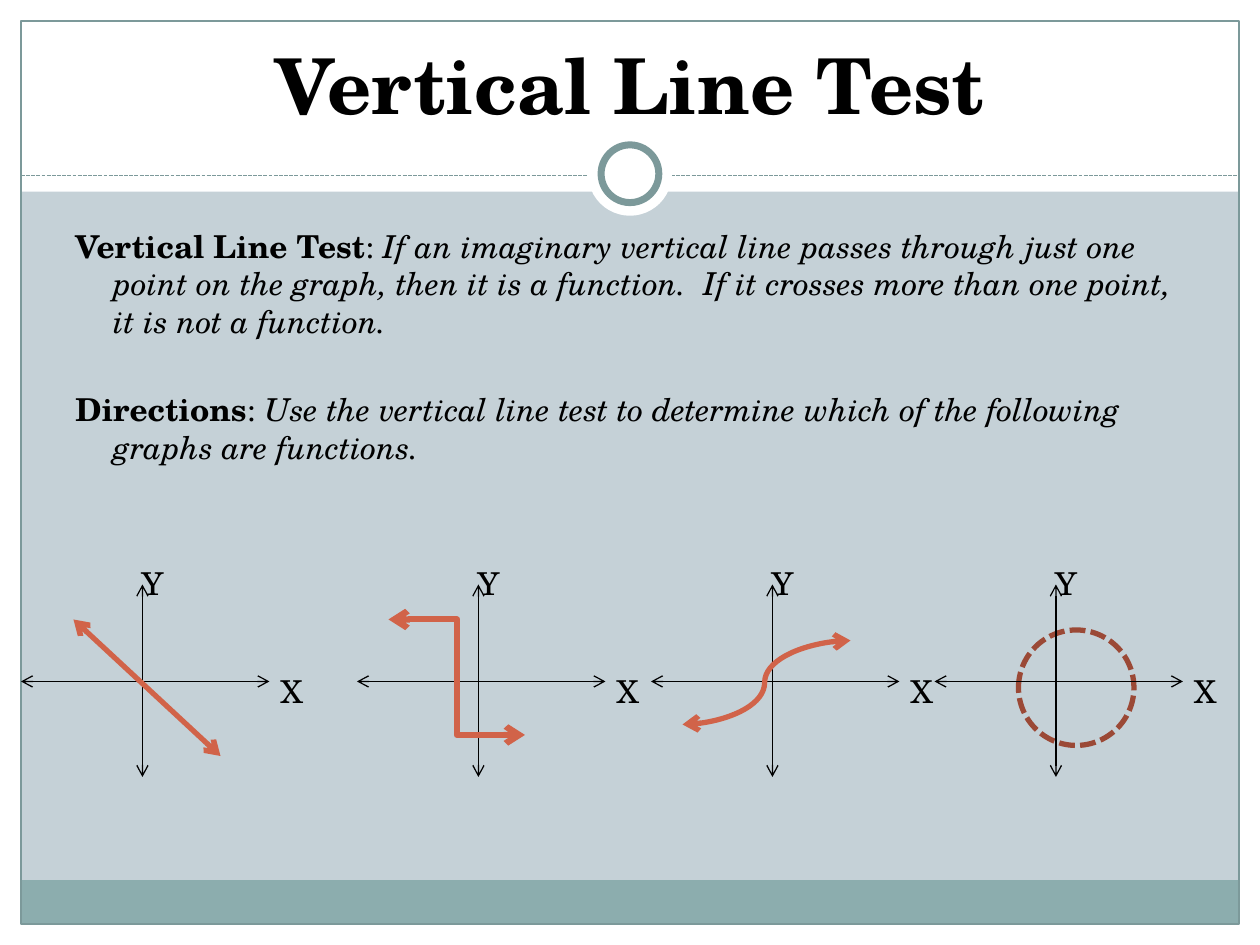
from dataclasses import dataclass

from lxml.etree import SubElement
from pptx import Presentation
from pptx.dml.color import RGBColor
from pptx.enum.dml import MSO_LINE
from pptx.enum.shapes import MSO_CONNECTOR, MSO_SHAPE
from pptx.enum.text import MSO_ANCHOR, MSO_AUTO_SIZE, PP_ALIGN
from pptx.oxml.ns import qn
from pptx.util import Pt


@dataclass(frozen=True)
class Theme:
    font: str = "TeX Gyre Schola"
    title_size: int = 44
    body_size: int = 18
    ink: str = "000000"
    paper: str = "FFFFFF"
    background: str = "C5D1D7"
    footer: str = "8CADAE"
    frame: str = "7C999A"
    graph: str = "D16349"
    circle: str = "9B4936"


THEME = Theme()
WIDTH, HEIGHT, MARGIN = 720, 540, 12


def color(code):
    return RGBColor.from_string(code)


def style_line(line, code, weight, dash=None):
    line.color.rgb = color(code)
    line.width = Pt(weight)
    if dash:
        line.dash_style = dash


def add_panel(slide, kind, box, fill=None, outline=None):
    panel = slide.shapes.add_shape(kind, *map(Pt, box))
    panel.shadow.inherit = False
    if fill:
        panel.fill.solid()
        panel.fill.fore_color.rgb = color(fill)
    else:
        panel.fill.background()
    if outline:
        style_line(panel.line, *outline)
    else:
        panel.line.fill.background()


def add_line(slide, start, end, code, weight, kind=MSO_CONNECTOR.STRAIGHT,
             dash=None, arrows=True, bend=None):
    line = slide.shapes.add_connector(kind, *map(Pt, (*start, *end)))
    style_line(line.line, code, weight, dash)
    properties = line._element.spPr
    if arrows:
        for end_tag in ("a:headEnd", "a:tailEnd"):
            SubElement(properties.find(qn("a:ln")), qn(end_tag), type="arrow")
    if bend:
        guides = properties.find(qn("a:prstGeom")).find(qn("a:avLst"))
        SubElement(guides, qn("a:gd"), name="adj1", fmla=f"val {bend}")
    SubElement(properties, qn("a:effectLst"))


def add_frame(slide, box):
    frame = slide.shapes.add_textbox(*map(Pt, box)).text_frame
    frame.word_wrap = True
    return frame


def style_text(paragraph, size=THEME.body_size):
    paragraph.font.name = THEME.font
    paragraph.font.size = Pt(size)
    paragraph.font.color.rgb = color(THEME.ink)


def add_title(slide, title):
    frame = add_frame(slide, (24, 18, 672, 60))
    frame.vertical_anchor = MSO_ANCHOR.BOTTOM
    heading = frame.paragraphs[0]
    heading.text = title
    heading.alignment = PP_ALIGN.CENTER
    style_text(heading, THEME.title_size)
    heading.font.bold = True


def add_statement(paragraph, term, statement, space_before):
    style_text(paragraph)
    paragraph.space_before = Pt(space_before)
    indents = paragraph._p.get_or_add_pPr()
    indents.set("marL", str(Pt(21.6)))
    indents.set("indent", str(-Pt(21.6)))
    for wording, bold, italic in ((term, True, False), (": ", False, False),
                                  (statement, False, True)):
        run = paragraph.add_run()
        run.text = wording
        run.font.bold = bold
        run.font.italic = italic


def add_axis_label(slide, letter, left, top):
    frame = add_frame(slide, (left, top, 13.5, 13.5))
    frame.auto_size = MSO_AUTO_SIZE.SHAPE_TO_FIT_TEXT
    label = frame.paragraphs[0]
    label.text = letter
    style_text(label)


def add_axes(slide, left):
    center, right = left + 69.4, left + 142
    add_line(slide, (center, 334), (center, 444), THEME.ink, 0.75)
    add_line(slide, (left, 389.4), (right, 389.4), THEME.ink, 0.75)
    add_axis_label(slide, "X", right, 380.7)
    add_axis_label(slide, "Y", center - 7, 318.5)


def add_backdrop(slide):
    slide.background.fill.solid()
    slide.background.fill.fore_color.rgb = color(THEME.background)
    # White borders: bottom, header, left, right
    for box in ((0, HEIGHT - MARGIN, WIDTH, MARGIN), (0, 0, WIDTH, 109.5),
                (0, 0, MARGIN, HEIGHT), (WIDTH - MARGIN, 0, MARGIN, HEIGHT)):
        add_panel(slide, MSO_SHAPE.RECTANGLE, box, THEME.paper)
    # Footer band and outer frame
    inner_width = WIDTH - 2 * MARGIN
    add_panel(slide, MSO_SHAPE.RECTANGLE, (11.75, 503, inner_width, 24.5), THEME.footer)
    add_panel(slide, MSO_SHAPE.RECTANGLE,
              (MARGIN, MARGIN, inner_width, HEIGHT - 2 * MARGIN),
              outline=(THEME.frame, 0.75))
    # Header rule with its ring
    add_line(slide, (MARGIN, 100.5), (WIDTH - MARGIN, 100.5), THEME.frame, 0.75,
             dash=MSO_LINE.SQUARE_DOT, arrows=False)
    for diameter, outline in ((48, None), (33, (THEME.frame, 4))):
        add_panel(slide, MSO_SHAPE.OVAL,
                  ((WIDTH - diameter) / 2, 99.3 - diameter / 2, diameter, diameter),
                  THEME.paper, outline)


def main():
    deck = Presentation()
    deck.slide_width, deck.slide_height = Pt(WIDTH), Pt(HEIGHT)
    slide = deck.slides.add_slide(deck.slide_layouts[6])
    add_backdrop(slide)

    # Circle graph, behind its axes
    add_panel(slide, MSO_SHAPE.OVAL, (582, 360, 66, 66), THEME.background,
              (THEME.circle, 3, MSO_LINE.SQUARE_DOT))

    # Wording
    add_title(slide, "Vertical Line Test")
    body = add_frame(slide, (36, 126, 648, 144))
    add_statement(body.paragraphs[0], "Vertical Line Test",
                  "If an imaginary vertical line passes through just one point on "
                  "the graph, then it is a function.  If it crosses more than one "
                  "point, it is not a function.", 3.6)
    add_statement(body.add_paragraph(), "Directions",
                  "Use the vertical line test to determine which of the following "
                  "graphs are functions.", 28.8)

    # Coordinate axes
    for left in (12, 204, 372, 534):
        add_axes(slide, left)

    # Curve, straight line and step graphs
    add_line(slide, (390, 414), (486, 366), THEME.graph, 3,
             MSO_CONNECTOR.CURVE, bend=48900)
    add_line(slide, (42, 354), (126, 432), THEME.graph, 3)
    add_line(slide, (222, 354), (300, 420), THEME.graph, 3.5, MSO_CONNECTOR.ELBOW)

    deck.save("out.pptx")


if __name__ == "__main__":
    main()
